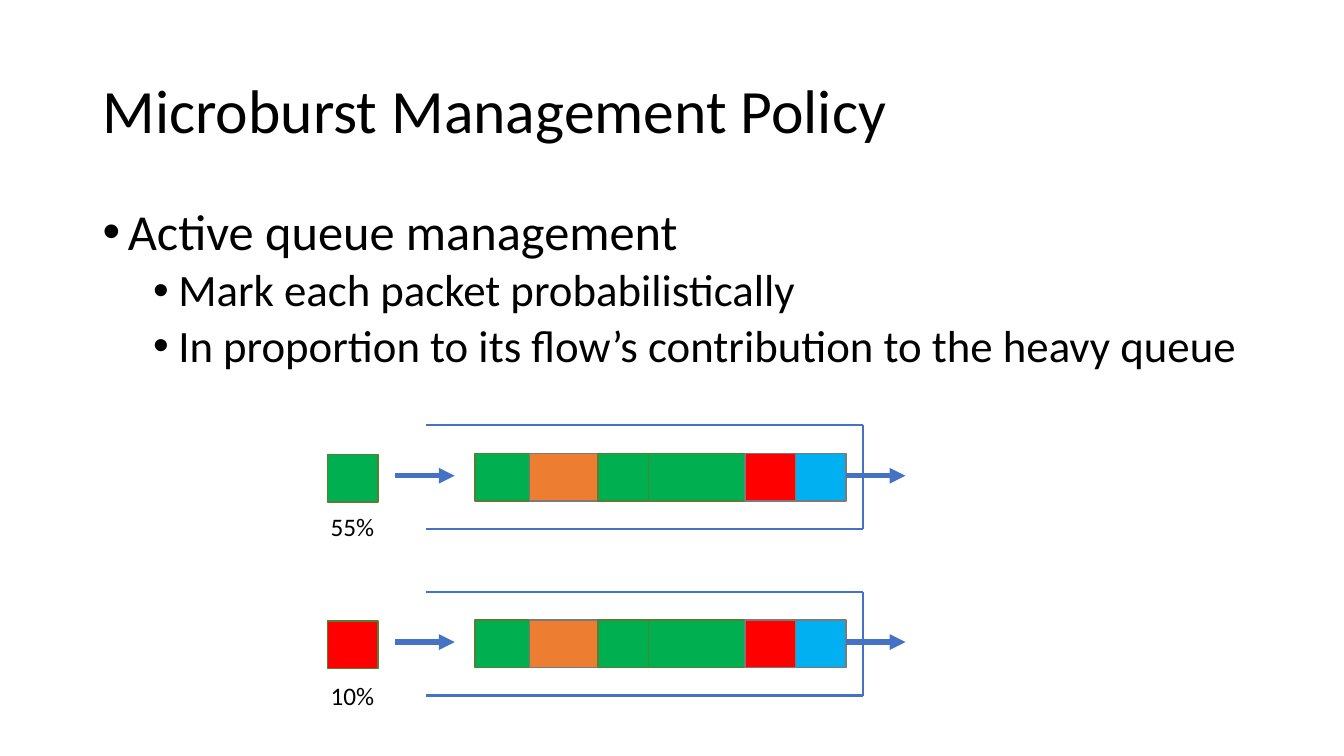
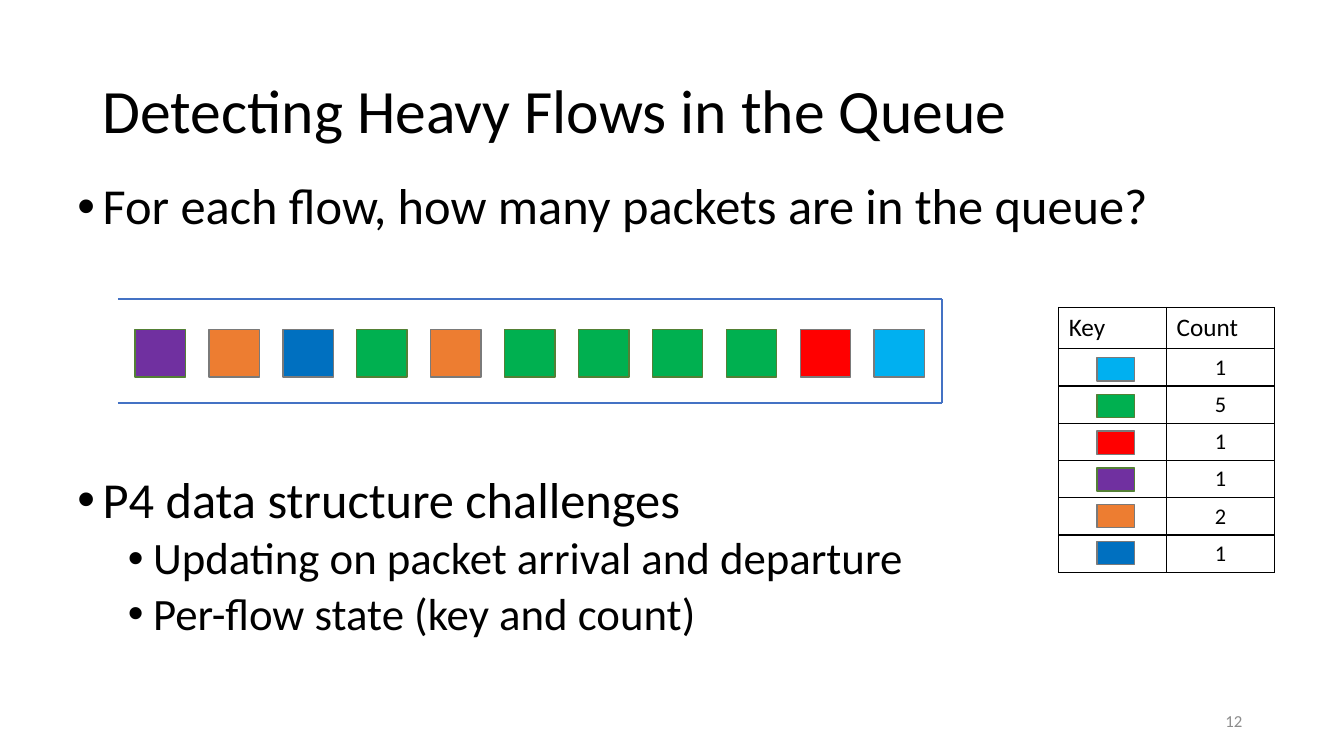
import pptx
import pptx.util
import pptx.dml.color
import pptx.enum.shapes
import pptx.enum.text
import pptx.oxml
import pptx.oxml.ns
import lxml.etree

Inches, Pt = pptx.util.Inches, pptx.util.Pt
qn = pptx.oxml.ns.qn
ALIGN = pptx.enum.text.PP_ALIGN
ANCHOR = pptx.enum.text.MSO_ANCHOR

# Shared look
FONT = "Calibri"
BLACK, WHITE, GREY, BLUE = "000000", "FFFFFF", "8C8C8C", "4472C4"
GREEN, ORANGE, RED = "00B050", "ED7D31", "FF0000"
SKY, NAVY, PURPLE = "00B0F0", "0070C0", "7030A0"
MOSS, STONE = "538035", "7A7A7A"
EDGES = {GREEN: MOSS, PURPLE: MOSS}
LEVELS = [  # size, space before, indent
    (36, 10, 0.25),
    (32, 5, 0.75),
]
HANG = 0.25
SIDE, TALL = 0.5, 0.47  # packet size

# Slide 1 content
POLICY = {
    "title": "Microburst Management Policy",
    "lists": [(0.92, 2, 11.5, [
        (0, "Active queue management"),
        (1, "Mark each packet probabilistically"),
        (1, "In proportion to its flow’s contribution to the heavy queue"),
    ])],
    "train": [(GREEN, 0.54), (ORANGE, 0.68), (GREEN, 0.5),
              (GREEN, 0.96), (RED, 0.5), (SKY, 0.5)],
    "lanes": [(4.22, GREEN, "55%", 5.02), (5.87, RED, "10%", 6.7)],
}

# Slide 2 content
DETECT = {
    "title": "Detecting Heavy Flows in the Queue",
    "lists": [
        (0.67, 1.75, 12, [
            (0, "For each flow, how many packets are in the queue?")]),
        (0.67, 4.66, 9.5, [
            (0, "P4 data structure challenges"),
            (1, "Updating on packet arrival and departure"),
            (1, "Per-flow state (key and count)")]),
    ],
    "queue": [PURPLE, ORANGE, NAVY, GREEN, ORANGE, GREEN,
              GREEN, GREEN, GREEN, RED, SKY],
    "heads": ["Key", "Count"],
    "counts": [(SKY, "1"), (GREEN, "5"), (RED, "1"),
               (PURPLE, "1"), (ORANGE, "2"), (NAVY, "1")],
    "number": "12",
}


def rgb(code):
    return pptx.dml.color.RGBColor.from_string(code)


def box(left, top, width, height):
    return [Inches(n) for n in (left, top, width, height)]


def write(par, text, size, color=BLACK):
    run = par.add_run()
    run.text = text
    run.font.name = FONT
    run.font.size = Pt(size)
    run.font.color.rgb = rgb(color)


def add_text(slide, area, text, size, color=BLACK, align=ALIGN.LEFT,
             anchor=ANCHOR.TOP, wrap=True, space=1.0):
    frame = slide.shapes.add_textbox(*box(*area)).text_frame
    frame.word_wrap = wrap
    frame.vertical_anchor = anchor
    par = frame.paragraphs[0]
    par.alignment = align
    par.line_spacing = space
    write(par, text, size, color)


def add_list(slide, left, top, width, items):
    area = box(left, top, width, 2)
    frame = slide.shapes.add_textbox(*area).text_frame
    frame.word_wrap = True
    for n, (level, text) in enumerate(items):
        par = frame.add_paragraph() if n else frame.paragraphs[0]
        size, before, indent = LEVELS[level]
        par.level = level
        par.line_spacing = 0.9
        par.space_before = Pt(before)
        props = par._p.get_or_add_pPr()
        props.set("marL", str(Inches(indent)))
        props.set("indent", str(-Inches(HANG)))
        lxml.etree.SubElement(props, qn("a:buFont"), typeface="Arial")
        lxml.etree.SubElement(props, qn("a:buChar"), char="•")
        write(par, text, size)


def add_packet(slide, left, top, color, width=SIDE, height=TALL, edge=None):
    kind = pptx.enum.shapes.MSO_SHAPE.RECTANGLE
    shape = slide.shapes.add_shape(kind, *box(left, top, width, height))
    shape.shadow.inherit = False
    shape.fill.solid()
    shape.fill.fore_color.rgb = rgb(color)
    shape.line.color.rgb = rgb(edge or EDGES.get(color, STONE))
    shape.line.width = Pt(1)


def add_line(slide, start, end, weight=1.5, arrow=False):
    kind = pptx.enum.shapes.MSO_CONNECTOR.STRAIGHT
    line = slide.shapes.add_connector(kind, *box(*start, *end))
    line.line.color.rgb = rgb(BLUE)
    line.line.width = Pt(weight)
    props = line.element.spPr
    if arrow:
        lxml.etree.SubElement(props.find(qn("a:ln")), qn("a:tailEnd"),
                              type="triangle")
    lxml.etree.SubElement(props, qn("a:effectLst"))


def add_queue(slide, left, right, top):
    low = top + 1.03
    add_line(slide, (left, top), (right, top))
    add_line(slide, (left, low), (right, low))
    add_line(slide, (right, low), (right, top))


def add_arrow(slide, left, top):
    add_line(slide, (left, top), (left + 0.59, top), 3.75, True)


def add_borders(cell):
    props = cell._tc.get_or_add_tcPr()
    for n, side in enumerate(("lnL", "lnR", "lnT", "lnB")):
        line = lxml.etree.Element(qn("a:" + side), w=str(Pt(1)))
        fill = lxml.etree.SubElement(line, qn("a:solidFill"))
        lxml.etree.SubElement(fill, qn("a:srgbClr"), val=BLACK)
        props.insert(n, line)


def add_counts(slide, heads, counts):
    left, top, width, head, high = 10.5, 3.05, 1.07, 0.41, 0.37
    rows = [heads] + [("", count) for _, count in counts]
    area = box(left, top, 2 * width, head + high * len(counts))
    table = slide.shapes.add_table(len(rows), 2, *area).table
    table.first_row = table.horz_banding = False
    for col in table.columns:
        col.width = Inches(width)
    for r, row in enumerate(rows):
        table.rows[r].height = Inches(high if r else head)
        for c, text in enumerate(row):
            cell = table.cell(r, c)
            cell.fill.solid()
            cell.fill.fore_color.rgb = rgb(WHITE)
            add_borders(cell)
            if text:
                par = cell.text_frame.paragraphs[0]
                par.alignment = ALIGN.CENTER if r else ALIGN.LEFT
                write(par, text, 16 if r else 18)
            else:
                cell.margin_top = cell.margin_bottom = 0
    # Colour keys
    for n, (color, _) in enumerate(counts):
        add_packet(slide, 10.88, 3.55 + n * 0.364, color, 0.37, 0.23)


def add_slide(deck, data):
    slide = deck.slides.add_slide(deck.slide_layouts[6])
    add_text(slide, (0.92, 0.4, 11.5, 1.45), data["title"], 44,
             anchor=ANCHOR.MIDDLE, space=0.9)
    for part in data["lists"]:
        add_list(slide, *part)
    return slide


def build_policy(deck):
    slide = add_slide(deck, POLICY)
    for top, color, share, low in POLICY["lanes"]:
        add_packet(slide, 3.25, top + 0.29, color, edge=MOSS)
        add_text(slide, (3.18, low, 0.64, 0.4), share, 18, wrap=False)
        left = 4.71
        for hue, width in POLICY["train"]:
            add_packet(slide, left, top + 0.28, hue, width)
            left += width
        add_queue(slide, 4.23, 8.56, top)
        add_arrow(slide, 3.92, top + 0.5)
        add_arrow(slide, left, top + 0.5)


def build_detect(deck):
    slide = add_slide(deck, DETECT)
    add_queue(slide, 1.17, 9.34, 2.97)
    first, last = 1.34, 8.67
    step = (last - first) / (len(DETECT["queue"]) - 1)
    for n, color in enumerate(DETECT["queue"]):
        add_packet(slide, first + n * step, 3.27, color)
    add_counts(slide, DETECT["heads"], DETECT["counts"])
    add_text(slide, (9.42, 6.95, 3, 0.4), DETECT["number"], 12, GREY,
             ALIGN.RIGHT, ANCHOR.MIDDLE)


def main():
    deck = pptx.Presentation()
    deck.slide_width, deck.slide_height = Inches(13.33), Inches(7.5)
    build_policy(deck)
    build_detect(deck)
    deck.save("out.pptx")


if __name__ == "__main__":
    main()
